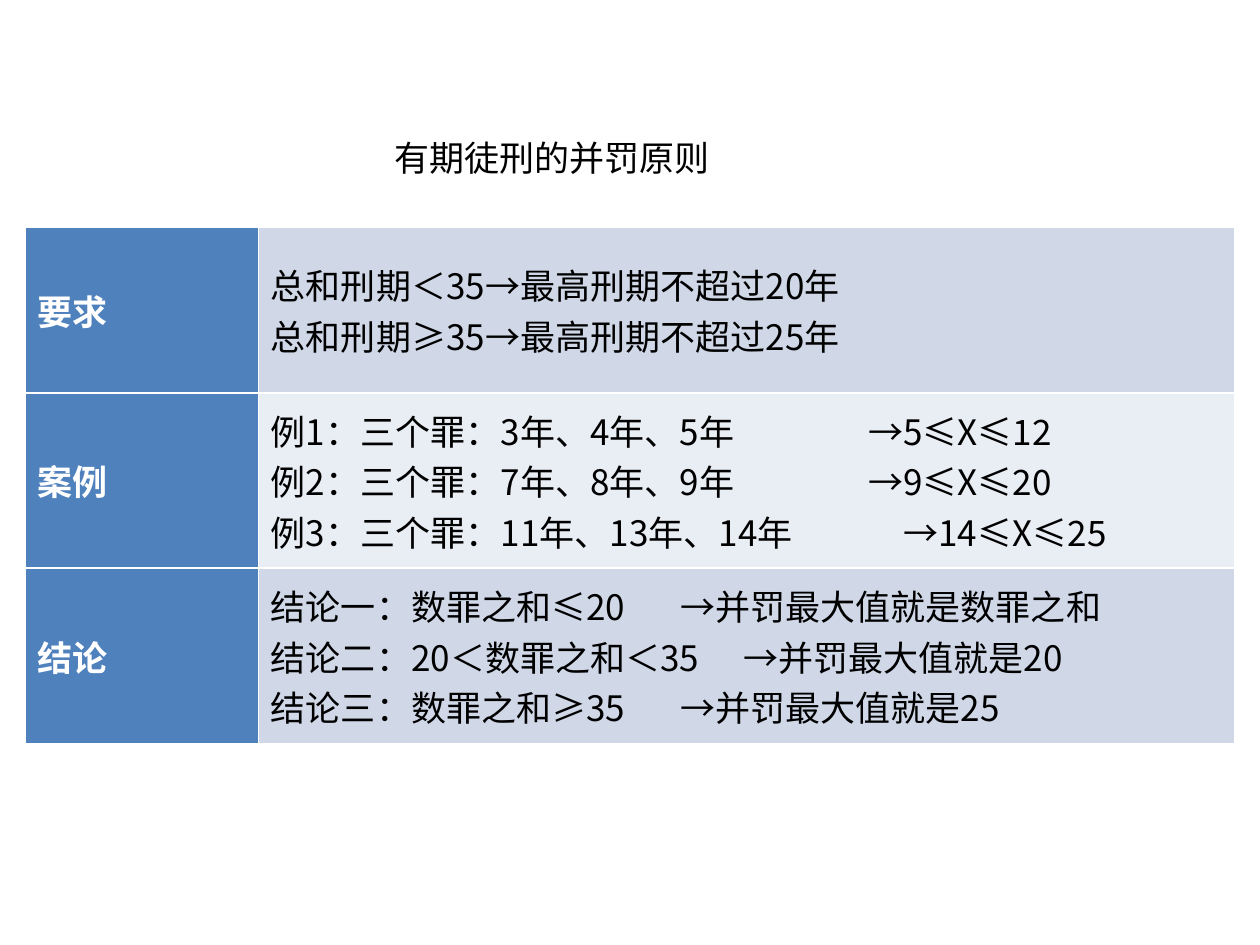
from lxml import etree
from pptx import Presentation
from pptx.dml.color import RGBColor
from pptx.enum.text import MSO_ANCHOR, PP_ALIGN
from pptx.oxml.ns import qn
from pptx.util import Inches, Pt

FONT = "Noto Sans CJK SC"
LEFT = PP_ALIGN.LEFT
MIDDLE = MSO_ANCHOR.MIDDLE
BOTTOM = MSO_ANCHOR.BOTTOM
COLORS = {
    "text": "000000",
    "heading_text": "FFFFFF",
    "heading": "4F81BD",
    "band_dark": "D0D8E8",
    "band_light": "E9EDF4",
}

# Each line of a section: text, and the tab stop in inches of its arrow
SECTIONS = [
    ("要求", 1.32, "band_dark", [
        ("总和刑期＜35→最高刑期不超过20年", None),
        ("总和刑期≥35→最高刑期不超过25年", None),
    ]),
    ("案例", 1.39, "band_light", [
        ("例1：三个罪：3年、4年、5年\t→5≤X≤12", 4.74),
        ("例2：三个罪：7年、8年、9年\t→9≤X≤20", 4.74),
        ("例3：三个罪：11年、13年、14年\t→14≤X≤25", 5.02),
    ]),
    ("结论", 1.39, "band_dark", [
        ("结论一：数罪之和≤20\t→并罚最大值就是数罪之和", 3.25),
        ("结论二：20＜数罪之和＜35\t→并罚最大值就是20", 3.75),
        ("结论三：数罪之和≥35\t→并罚最大值就是25", 3.25),
    ]),
]


def style_paragraph(paragraph, color, bold=False, tab=None):
    """Set the shared font, for Latin and East Asian text, and an optional tab stop."""
    paragraph.alignment = LEFT
    font = paragraph.font
    font.size = Pt(20)
    font.bold = bold
    font.color.rgb = RGBColor.from_string(COLORS[color])
    font.name = FONT
    properties = paragraph._p.get_or_add_pPr()
    defaults = properties.find(qn("a:defRPr"))
    etree.SubElement(defaults, qn("a:ea"), typeface=FONT)
    if tab:
        tab_list = etree.Element(qn("a:tabLst"))
        etree.SubElement(tab_list, qn("a:tab"), pos=str(Inches(tab)), algn="l")
        defaults.addprevious(tab_list)


def fill_cell(cell, text, color):
    cell.text = text
    cell.vertical_anchor = MIDDLE
    cell.fill.solid()
    cell.fill.fore_color.rgb = RGBColor.from_string(COLORS[color])


prs = Presentation()
prs.slide_width, prs.slide_height = Inches(10), Inches(7.5)
slide = prs.slides.add_slide(prs.slide_layouts[5])

title = slide.shapes.title
title.left, title.top = Inches(2.8), Inches(0.84)
title.width, title.height = Inches(5), Inches(0.61)
title_frame = title.text_frame
title_frame.text = "有期徒刑的并罚原则"
title_frame.vertical_anchor = BOTTOM
title_frame.margin_left = Inches(0.33)
title_frame.margin_bottom = Inches(0.03)
style_paragraph(title_frame.paragraphs[0], "text")

rules = slide.shapes.add_table(
    len(SECTIONS), 2, Inches(0.2), Inches(1.8), Inches(9.6), Inches(4.1)
).table
rules.first_row = False
rules.horz_banding = False
rules.columns[0].width = Inches(1.85)
rules.columns[1].width = Inches(7.75)

for row, (heading, height, band, lines) in enumerate(SECTIONS):
    rules.rows[row].height = Inches(height)

    heading_cell = rules.cell(row, 0)
    fill_cell(heading_cell, heading, "heading")
    style_paragraph(heading_cell.text_frame.paragraphs[0], "heading_text", bold=True)

    content_cell = rules.cell(row, 1)
    fill_cell(content_cell, "\n".join(text for text, _ in lines), band)
    for paragraph, (_, tab) in zip(content_cell.text_frame.paragraphs, lines):
        style_paragraph(paragraph, "text", tab=tab)

prs.save("out.pptx")
